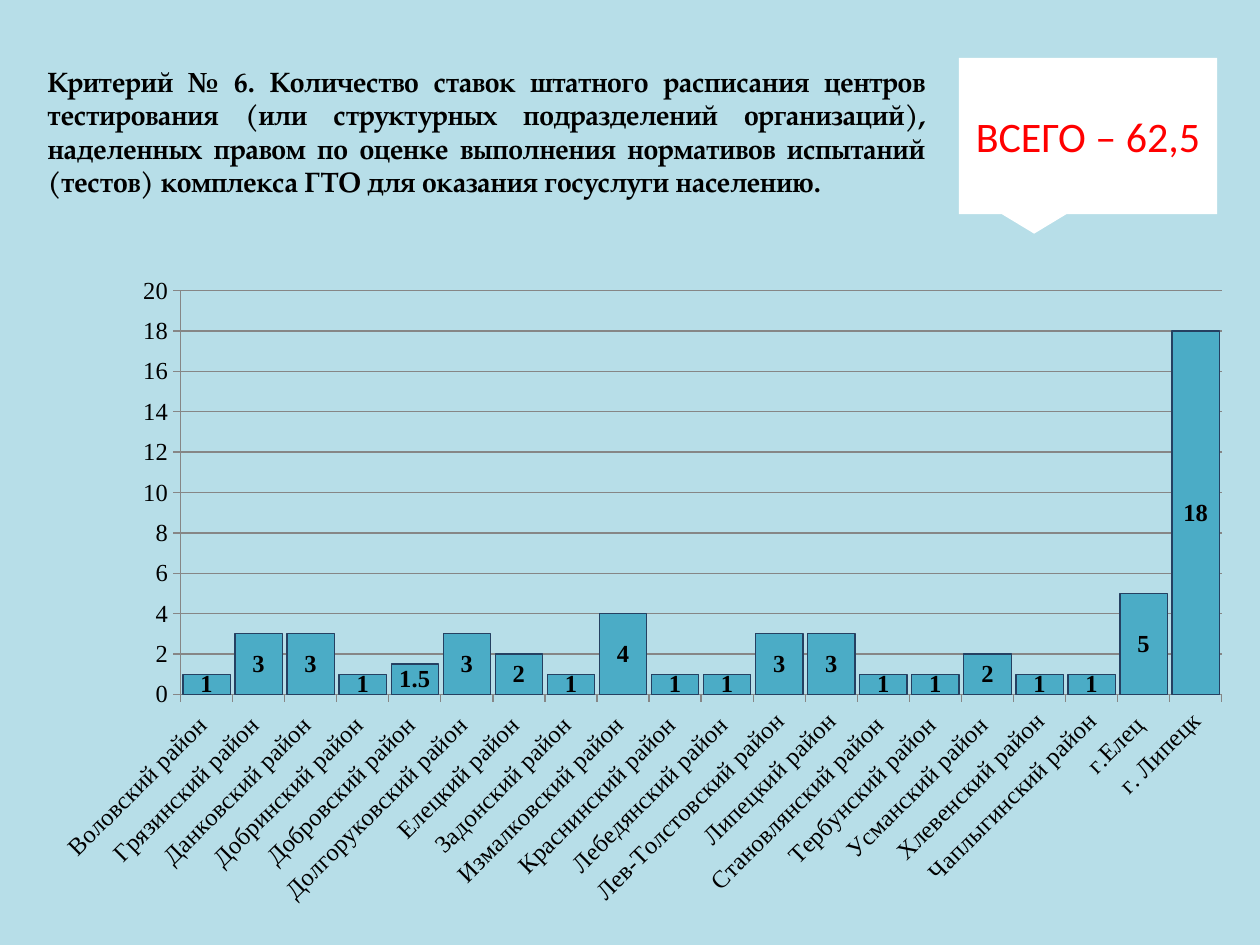
from lxml import etree
from pptx import Presentation, util as u
from pptx.chart.data import CategoryChartData
from pptx.dml.color import RGBColor
from pptx.enum import chart as ch, shapes, text
from pptx.oxml.ns import qn

SKY = RGBColor(0xB7, 0xDE, 0xE8)
TEAL = RGBColor(0x4B, 0xAC, 0xC6)
NAVY = RGBColor(0x25, 0x40, 0x61)
GRAY = RGBColor(0x86, 0x86, 0x86)
BLACK = RGBColor(0, 0, 0)
WHITE = RGBColor(255, 255, 255)
RED = RGBColor(255, 0, 0)

WIDE, HIGH = u.Inches(10), u.Inches(7.5)
LEFT, TOP = 0.28, 0.46

TITLE = (
    "Критерий № 6. Количество ставок штатного расписания центров "
    "тестирования (или структурных подразделений организаций), "
    "наделенных правом по оценке выполнения нормативов испытаний "
    "(тестов) комплекса ГТО для оказания госуслуги населению."
)
RATES = {
    "Воловский район ": 1,
    "Грязинский район ": 3,
    "Данковский район ": 3,
    "Добринский район ": 1,
    "Добровский район ": 1.5,
    "Долгоруковский район ": 3,
    "Елецкий район ": 2,
    "Задонский район ": 1,
    "Измалковский район ": 4,
    "Краснинский район ": 1,
    "Лебедянский район ": 1,
    "Лев-Толстовский район": 3,
    "Липецкий район": 3,
    "Становлянский район ": 1,
    "Тербунский район ": 1,
    "Усманский район ": 2,
    "Хлевенский район": 1,
    "Чаплыгинский район": 1,
    "г.Елец ": 5,
    "г. Липецк": 18,
}


def box(*sides):
    return [u.Inches(side) for side in sides]


def style(font, face, size, color, bold=False):
    font.name, font.size, font.bold = face, u.Pt(size), bold
    font.color.rgb = color


def write(frame, words, align, *look):
    frame.word_wrap = True
    para = frame.paragraphs[0]
    para.alignment = align
    run = para.add_run()
    run.text = words
    style(run.font, *look)


def add_title(slide):
    frame = slide.shapes.add_textbox(*box(LEFT, TOP, 7.17, 1.45)).text_frame
    frame.auto_size = text.MSO_AUTO_SIZE.SHAPE_TO_FIT_TEXT
    write(frame, TITLE, text.PP_ALIGN.JUSTIFY,
          "TeX Gyre Pagella", 16, BLACK, True)


def add_total(slide):
    note = slide.shapes.add_shape(
        shapes.MSO_SHAPE.RECTANGULAR_CALLOUT, *box(7.61, TOP, 2.05, 1.24))
    note.shadow.inherit = False
    note.fill.solid()
    note.fill.fore_color.rgb = WHITE
    note.line.fill.background()
    note.text_frame.vertical_anchor = text.MSO_ANCHOR.MIDDLE
    write(note.text_frame, "ВСЕГО – 62,5", text.PP_ALIGN.CENTER,
          "Calibri", 24, RED)


def set_line(line, color):
    line.color.rgb = color
    line.width = u.Pt(0.75)


def fill_back(node, spot):
    """Put a solid sky fill into a chart part, at the given child index."""
    props = etree.Element(qn("c:spPr"))
    solid = etree.SubElement(props, qn("a:solidFill"))
    etree.SubElement(solid, qn("a:srgbClr"), val=str(SKY))
    node.insert(spot, props)


def place_plot(area, **shares):
    """Fix the inner plot area as shares of the chart's size."""
    for old in area.findall(qn("c:layout")):
        area.remove(old)
    layout = etree.Element(qn("c:layout"))
    manual = etree.SubElement(layout, qn("c:manualLayout"))
    etree.SubElement(manual, qn("c:layoutTarget"), val="inner")
    for mode in ("xMode", "yMode"):
        etree.SubElement(manual, qn("c:" + mode), val="edge")
    for key, share in shares.items():
        etree.SubElement(manual, qn("c:" + key), val=str(share))
    area.insert(0, layout)


def set_axes(chart):
    for axis in (chart.category_axis, chart.value_axis):
        axis.major_tick_mark = ch.XL_TICK_MARK.OUTSIDE
        axis.minor_tick_mark = ch.XL_TICK_MARK.NONE
        set_line(axis.format.line, GRAY)
    names, scale = chart.category_axis, chart.value_axis
    names.tick_labels.font.size = u.Pt(14)
    body = names._element.find(qn("c:txPr")).find(qn("a:bodyPr"))
    body.set("rot", str(-45 * 60000))
    scale.minimum_scale, scale.maximum_scale, scale.major_unit = 0, 20, 2
    scale.has_major_gridlines = True
    set_line(scale.major_gridlines.format.line, GRAY)


def set_bars(plot):
    plot.gap_width, plot.overlap = 10, 100
    plot.vary_by_categories = False
    bars = plot.series[0]
    bars.format.fill.solid()
    bars.format.fill.fore_color.rgb = TEAL
    set_line(bars.format.line, NAVY)
    tags = bars.data_labels
    tags.show_value = True
    tags.position = ch.XL_LABEL_POSITION.CENTER
    style(tags.font, "Times New Roman", 14, BLACK, True)


def add_rates(slide):
    data = CategoryChartData()
    data.categories = list(RATES)
    data.add_series("Series 1", list(RATES.values()))
    chart = slide.shapes.add_chart(
        ch.XL_CHART_TYPE.COLUMN_STACKED, *box(LEFT, 2.1, 9.61, 5.17),
        data).chart
    chart.has_legend = chart.has_title = False
    style(chart.font, "Times New Roman", 14, BLACK)
    set_axes(chart)
    set_bars(chart.plots[0])
    root = chart._chartSpace
    body = root.find(qn("c:chart"))
    area = body.find(qn("c:plotArea"))
    place_plot(area, x=0.12, y=0.04, w=0.86, h=0.62)
    fill_back(area, len(area))
    fill_back(root, root.index(body) + 1)


def main():
    deck = Presentation()
    deck.slide_width, deck.slide_height = WIDE, HIGH
    slide = deck.slides.add_slide(deck.slide_layouts[6])
    back = slide.background.fill
    back.solid()
    back.fore_color.rgb = SKY
    add_title(slide)
    add_total(slide)
    add_rates(slide)
    deck.save("out.pptx")


if __name__ == "__main__":
    main()
